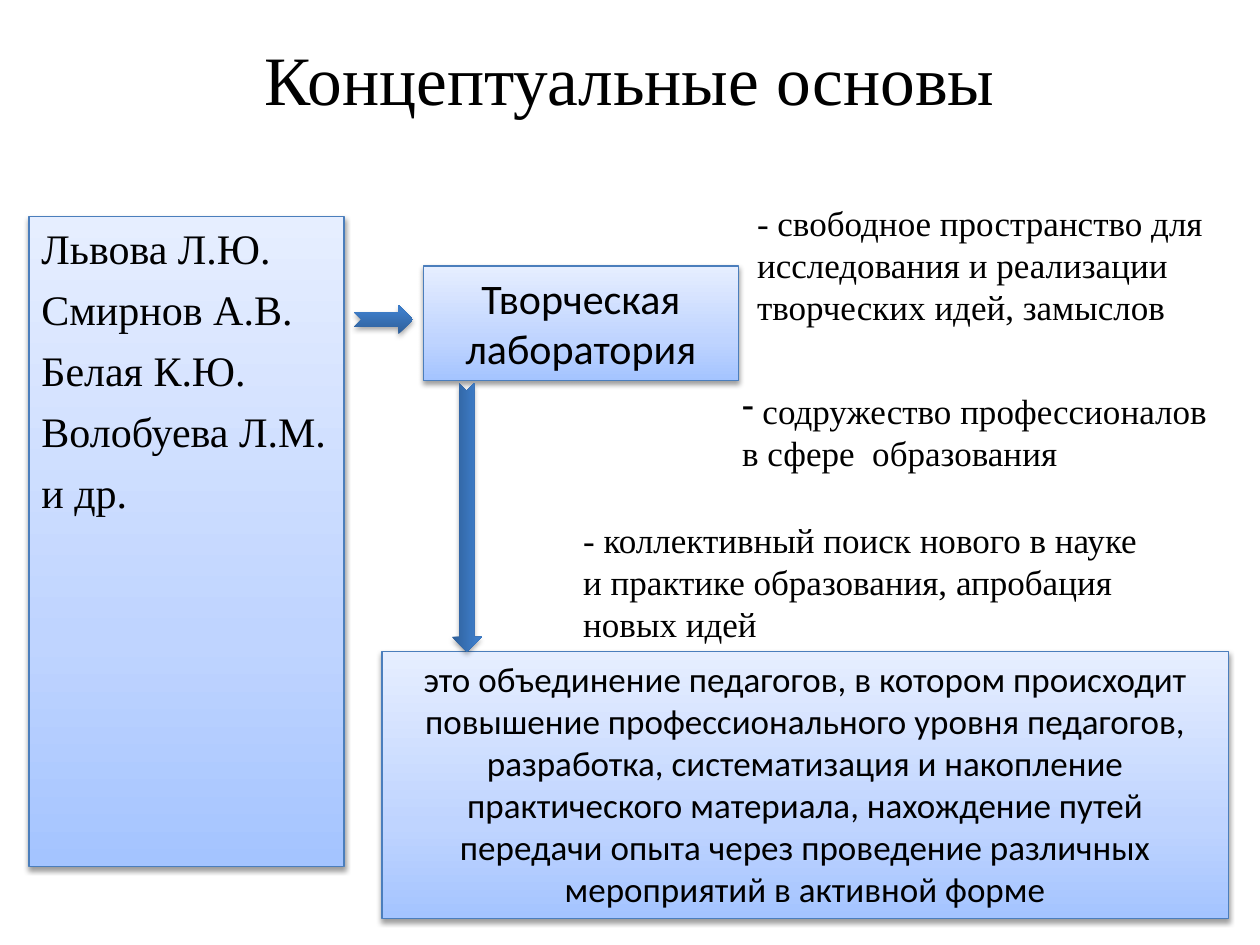
from lxml import etree
from pptx import Presentation
from pptx import util as u
from pptx.dml.color import RGBColor
from pptx.enum import shapes, text
from pptx.oxml import ns

BLACK = RGBColor(0x00, 0x00, 0x00)
EDGE = RGBColor(0x4B, 0x7E, 0xBC)
# Gradient stops: percent and colour, from bottom to top
PALE = [(0, RGBColor(0xA4, 0xC4, 0xFF)), (35, RGBColor(0xBF, 0xD4, 0xFF)),
        (100, RGBColor(0xE6, 0xEE, 0xFF))]
DEEP = [(0, RGBColor(0x2F, 0x5F, 0x99)), (80, RGBColor(0x3D, 0x7C, 0xC7)),
        (100, RGBColor(0x3A, 0x7C, 0xCB))]

SERIF, SANS = "Times New Roman", "Calibri"
LEFT, MID = text.PP_ALIGN.LEFT, text.PP_ALIGN.CENTER
KIND = shapes.MSO_SHAPE


def place(box):
    return [u.Pt(n) for n in box]


def add(node, tag, **attrs):
    vals = {key: str(val) for key, val in attrs.items()}
    return etree.SubElement(node, ns.qn(tag), vals)


def shade(shape, stops):
    """Fill with a vertical gradient."""
    shape.fill.gradient()
    shape.fill.gradient_angle = 90
    grad = shape._element.spPr.find(ns.qn("a:gradFill"))
    row = grad.find(ns.qn("a:gsLst"))
    for old in list(row):
        row.remove(old)
    for pos, tint in stops:
        stop = add(row, "a:gs", pos=pos * 1000)
        add(stop, "a:srgbClr", val=tint)


def drop(shape, alpha):
    """Cast a soft shadow straight down."""
    shape.shadow.inherit = False
    fx = shape._element.spPr.find(ns.qn("a:effectLst"))
    cast = add(fx, "a:outerShdw", blurRad=u.Pt(3.1), dist=u.Pt(1.6),
               dir=90 * 60000, rotWithShape=0)
    tint = add(cast, "a:srgbClr", val=BLACK)
    add(tint, "a:alpha", val=alpha * 1000)


def write(shape, lines, size, face, align=LEFT, anchor=text.MSO_ANCHOR.TOP,
          gap=0, mark=None):
    frame = shape.text_frame
    frame.word_wrap = True
    frame.vertical_anchor = anchor
    look = {"name": face, "size": u.Pt(size)}
    for i, line in enumerate(lines):
        para = frame.paragraphs[0] if i == 0 else frame.add_paragraph()
        if mark:
            add(para._p.get_or_add_pPr(), "a:buChar", char=mark)
        para.alignment = align
        if i and gap:
            para.space_before = u.Pt(gap)
        run = para.add_run()
        run.text = line
        for key, val in look.items():
            setattr(run.font, key, val)
        run.font.color.rgb = BLACK


def label(slide, box, line, size=20, **opts):
    shape = slide.shapes.add_textbox(*place(box))
    write(shape, [line], size, SERIF, **opts)


def panel(slide, box, lines, size, face, **opts):
    shape = slide.shapes.add_shape(KIND.RECTANGLE, *place(box))
    shade(shape, PALE)
    shape.line.color.rgb = EDGE
    shape.line.width = u.Pt(0.75)
    drop(shape, 38)
    write(shape, lines, size, face, **opts)


def arrow(slide, box, turn=0):
    shape = slide.shapes.add_shape(KIND.NOTCHED_RIGHT_ARROW, *place(box))
    shape.rotation = turn
    shade(shape, DEEP)
    shape.line.fill.background()
    drop(shape, 35)


def main():
    deck = Presentation()
    deck.slide_width, deck.slide_height = u.Pt(720), u.Pt(540)
    slide = deck.slides.add_slide(deck.slide_layouts[6])

    # Title
    label(slide, (36, 21.6, 648, 46), "Концептуальные основы", 39.6,
          align=MID, anchor=text.MSO_ANCHOR.MIDDLE)

    # Central idea
    panel(slide, (242, 152, 180, 65.5), ["Творческая лаборатория"], 24, SANS,
          align=MID)

    # Features of the laboratory
    label(slide, (425.5, 111.6, 294.5, 80), "- свободное пространство для "
          "исследования и реализации творческих идей, замыслов")
    label(slide, (326.2, 292.6, 343.4, 80), "- коллективный поиск нового в "
          "науке и практике образования, апробация новых идей")
    label(slide, (417, 219, 286.6, 55.4),
          " содружество профессионалов в сфере  образования", mark="-")

    # Authors
    panel(slide, (16.6, 123.8, 180, 371.5),
          ["Львова Л.Ю.", "Смирнов А.В.", "Белая К.Ю.", "Волобуева Л.М.",
           "и др."], 24, SERIF, gap=6)

    # Definition
    panel(slide, (218.2, 372.2, 483.8, 152.6),
          ["это объединение педагогов, в котором происходит повышение "
           "профессионального уровня педагогов, разработка, систематизация "
           "и накопление практического материала, нахождение путей передачи "
           "опыта через проведение различных мероприятий в активной форме"],
          20, SANS, align=MID)

    # Arrows
    arrow(slide, (202.3, 174.2, 33.8, 16.8))
    arrow(slide, (190, 287.3, 153.4, 17), 90)

    deck.save("out.pptx")


if __name__ == "__main__":
    main()
